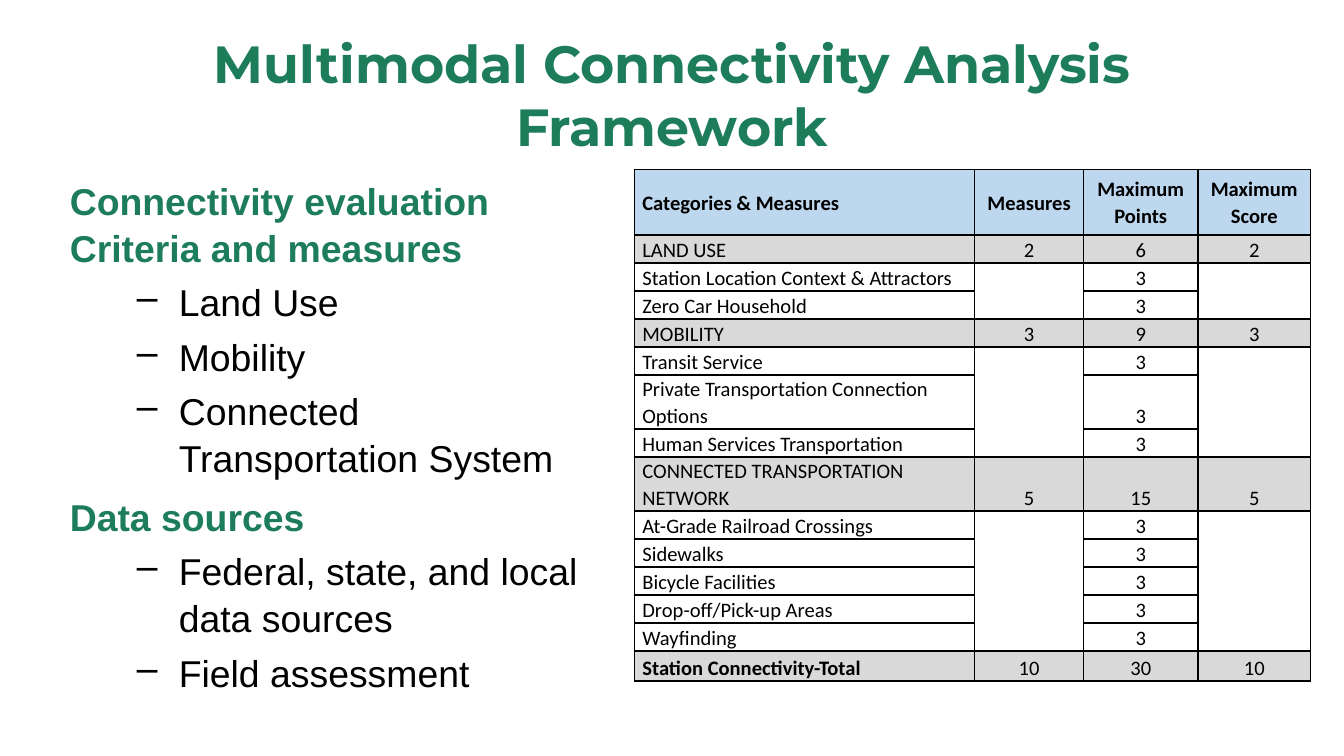
from lxml import etree
from pptx import Presentation
from pptx.dml.color import RGBColor
from pptx.enum.text import MSO_ANCHOR, PP_ALIGN
from pptx.oxml.ns import qn
from pptx.util import Cm, Pt

LEFT, CENTER = PP_ALIGN.LEFT, PP_ALIGN.CENTER
MIDDLE, BOTTOM = MSO_ANCHOR.MIDDLE, MSO_ANCHOR.BOTTOM
GREEN, BLACK, BLUE, GRAY = "1D7D5B", "000000", "BDD7EE", "D9D9D9"


def write(paragraph, text, font="Arial", size=20, color=BLACK, bold=False,
          align=LEFT, spacing=1.0, before=0, bullet=None):
    """Fill one paragraph; a bullet character also sets its hanging indent."""
    paragraph.alignment = align
    paragraph.line_spacing = spacing
    paragraph.space_before = Pt(before)
    if bullet:
        properties = paragraph._p.get_or_add_pPr()
        properties.set("marL", str(Cm(2.06)))
        properties.set("indent", str(Cm(-0.79)))
        etree.SubElement(properties, qn("a:buChar")).set("char", bullet)
    run = paragraph.add_run()
    run.text = text
    run.font.name = font
    run.font.size = Pt(size)
    run.font.bold = bold
    run.font.color.rgb = RGBColor.from_string(color)


def add_borders(cell):
    properties = cell._tc.get_or_add_tcPr()
    for position, side in enumerate(("lnL", "lnR", "lnT", "lnB")):
        line = etree.Element(qn(f"a:{side}"), w=str(Pt(1)))
        fill = etree.SubElement(line, qn("a:solidFill"))
        etree.SubElement(fill, qn("a:srgbClr")).set("val", BLACK)
        properties.insert(position, line)


prs = Presentation()
prs.slide_width, prs.slide_height = Cm(25.4), Cm(14.29)
slide = prs.slides.add_slide(prs.slide_layouts[6])

# Title
title = slide.shapes.add_textbox(Cm(1.27), Cm(0.58), Cm(22.86), Cm(2.39)).text_frame
title.word_wrap = True
title.vertical_anchor = MIDDLE
write(title.paragraphs[0], "Multimodal Connectivity Analysis Framework",
      font="Montserrat", size=28, color=GREEN, bold=True, align=CENTER)

# Outline
outline = [
    ("Connectivity evaluation Criteria and measures",
     ["Land Use", "Mobility", "Connected Transportation System"]),
    ("Data sources",
     ["Federal, state, and local data sources", "Field assessment"]),
]
body = slide.shapes.add_textbox(Cm(1.07), Cm(3.2), Cm(10.11), Cm(9.88)).text_frame
body.word_wrap = True
for number, (heading, points) in enumerate(outline):
    paragraph = body.add_paragraph() if number else body.paragraphs[0]
    write(paragraph, heading, color=GREEN, bold=True, spacing=1.05,
          before=6 if number else 0)
    for point in points:
        paragraph = body.add_paragraph()
        paragraph.level = 1
        write(paragraph, point, spacing=1.05, before=4, bullet="–")

# Scoring table: each category row is followed by its measures
HEADER = ("Categories & Measures", "Measures", "Maximum Points", "Maximum Score")
TOTAL = ("Station Connectivity-Total", "10", "30", "10")
POINTS_PER_MEASURE = 3
categories = {
    "LAND USE": ["Station Location Context & Attractors", "Zero Car Household"],
    "MOBILITY": ["Transit Service", "Private Transportation Connection Options",
                 "Human Services Transportation"],
    "CONNECTED TRANSPORTATION NETWORK": [
        "At-Grade Railroad Crossings", "Sidewalks", "Bicycle Facilities",
        "Drop-off/Pick-up Areas", "Wayfinding"],
}
rows = [(HEADER, BLUE, 1.24)]
merges = []
for category, measures in categories.items():
    count = len(measures)
    summary = (category, str(count), str(count * POINTS_PER_MEASURE), str(count))
    rows.append((summary, GRAY, 1.02 if len(category) > 30 else 0.53))
    merges.append((len(rows), len(rows) + count - 1))
    for measure in measures:
        rows.append(((measure, "", str(POINTS_PER_MEASURE), ""), None,
                     1.02 if len(measure) > 40 else 0.53))
rows.append((TOTAL, GRAY, 0.56))

widths = [6.43, 2.06, 2.16, 2.13]
table = slide.shapes.add_table(
    len(rows), len(widths), Cm(11.99), Cm(3.2), Cm(sum(widths)),
    Cm(sum(height for _, _, height in rows))).table
for column, width in zip(table.columns, widths):
    column.width = Cm(width)
for r, (texts, fill, height) in enumerate(rows):
    table.rows[r].height = Cm(height)
    for c, text in enumerate(texts):
        cell = table.cell(r, c)
        cell.margin_left = cell.margin_right = Cm(0.15)
        cell.margin_top = cell.margin_bottom = 0
        cell.vertical_anchor = MIDDLE if texts is HEADER else BOTTOM
        if fill:
            cell.fill.solid()
            cell.fill.fore_color.rgb = RGBColor.from_string(fill)
        else:
            cell.fill.background()
        add_borders(cell)
        write(cell.text_frame.paragraphs[0], text, font="Calibri", size=11,
              bold=texts is HEADER or text == TOTAL[0],
              align=CENTER if c else LEFT, spacing=1.07)
for first, last in merges:
    for c in (1, 3):
        table.cell(first, c).merge(table.cell(last, c))

prs.save("out.pptx")
